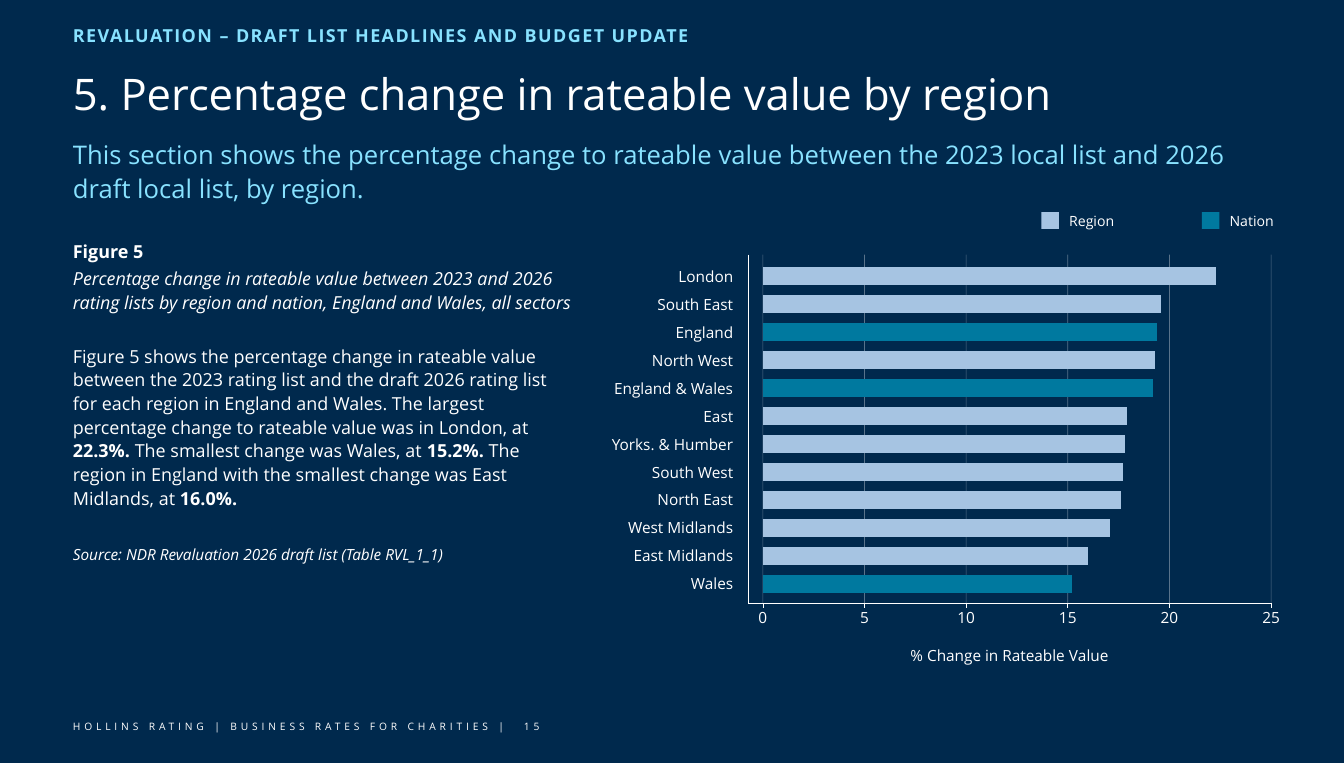
from lxml import etree
from pptx import Presentation
from pptx import util as u
from pptx.chart import data
from pptx.dml.color import RGBColor
from pptx.enum import chart as charts
from pptx.enum import shapes, text
from pptx.oxml import ns

NAVY = RGBColor(0x00, 0x29, 0x4D)
WHITE = RGBColor(0xFF, 0xFF, 0xFF)
SKY = RGBColor(0x88, 0xE2, 0xFF)
PALE = RGBColor(0xA6, 0xC4, 0xE2)
TEAL = RGBColor(0x00, 0x79, 0x9F)
FONT = "Open Sans"
KINDS = {"Region": PALE, "Nation": TEAL}
CHANGES = [
    ("London", "Region", 22.3),
    ("South East", "Region", 19.6),
    ("England", "Nation", 19.4),
    ("North West", "Region", 19.3),
    ("England & Wales", "Nation", 19.2),
    ("East", "Region", 17.9),
    ("Yorks. & Humber", "Region", 17.8),
    ("South West", "Region", 17.7),
    ("North East", "Region", 17.6),
    ("West Midlands", "Region", 17.1),
    ("East Midlands", "Region", 16.0),
    ("Wales", "Nation", 15.2),
]


def set_font(font, color=WHITE, **values):
    font.color.rgb = color
    for name, value in {"name": FONT, "bold": False, "italic": False, **values}.items():
        setattr(font, name, value)


def fill_frame(frame, paragraphs, anchor=text.MSO_ANCHOR.TOP):
    settings = {"word_wrap": True, "vertical_anchor": anchor,
                "auto_size": text.MSO_AUTO_SIZE.NONE, "margin_left": 0,
                "margin_right": 0, "margin_top": 0, "margin_bottom": 0}
    for name, value in settings.items():
        setattr(frame, name, value)
    for index, (spans, layout) in enumerate(paragraphs):
        para = frame.add_paragraph() if index else frame.paragraphs[0]
        for name, value in layout.items():
            setattr(para, name, value)
        for words, values in spans:
            span = para.add_run()
            span.text = words
            values = dict(values)
            spacing = values.pop("spacing", 0)
            set_font(span.font, **values)
            if spacing:
                span.font._element.set("spc", str(spacing))


def add_text(page, box, paragraphs, **options):
    area = page.shapes.add_textbox(*map(u.Inches, box))
    fill_frame(area.text_frame, paragraphs, **options)


def add_line(page, start, end, opacity=100):
    line = page.shapes.add_connector(shapes.MSO_CONNECTOR.STRAIGHT,
                                     *map(u.Inches, start + end))
    line.line.color.rgb = WHITE
    line.line.width = u.Pt(0.5)
    if opacity < 100:
        color = line._element.spPr.find(f".//{ns.qn('a:srgbClr')}")
        etree.SubElement(color, ns.qn("a:alpha")).set("val", str(opacity * 1000))
    etree.SubElement(line._element.spPr, ns.qn("a:effectLst"))


def add_layout(parent, position, **fractions):
    for old in parent.findall(ns.qn("c:layout")):
        parent.remove(old)
    layout = etree.Element(ns.qn("c:layout"))
    parent.insert(position, layout)
    manual = etree.SubElement(layout, ns.qn("c:manualLayout"))
    values = {"xMode": "edge", "yMode": "edge", **fractions}
    if "w" in fractions:
        values = {"layoutTarget": "inner", **values}
    for name, value in values.items():
        etree.SubElement(manual, ns.qn(f"c:{name}")).set("val", str(value))


def add_heading(page, box):
    left, top, width, height = box
    body = {"line_spacing": 1.1, "space_after": u.Pt(3)}
    add_text(page, (left, top, width, 0.34), [
        ([("REVALUATION – DRAFT LIST HEADLINES AND BUDGET UPDATE",
           {"size": u.Pt(14), "bold": True, "color": SKY, "spacing": 110})], body)])
    title = page.shapes.title
    place = {"left": left, "top": top + 0.55, "width": width, "height": 0.55}
    for name, value in place.items():
        setattr(title, name, u.Inches(value))
    fill_frame(title.text_frame, [
        ([("5. Percentage change in rateable value by region", {"size": u.Pt(34)})],
         {"line_spacing": 0.9, "space_after": u.Pt(7.5), "alignment": text.PP_ALIGN.LEFT})])
    add_text(page, (left, top + 1.23, width, height - 1.23), [
        ([("This section shows the percentage change to rateable value between the "
           "2023 local list and 2026 draft local list, by region.",
           {"size": u.Pt(20), "color": SKY})], body)])


def add_commentary(page, box):
    left, top, width, height = box
    plain = {"size": u.Pt(14)}
    bold = {**plain, "bold": True}
    body = {"line_spacing": 1.1, "space_after": u.Pt(12)}
    add_text(page, (left, top, width, 0.8), [
        ([("Figure 5", bold)], {**body, "space_after": u.Pt(3)}),
        ([("Percentage change in rateable value between 2023 and 2026 rating lists "
           "by region and nation, England and Wales, all sectors",
           {**plain, "italic": True})], body)])
    add_text(page, (left, top + 1.14, width - 0.24, 1.9), [
        ([("Figure 5 shows the percentage change in rateable value between the 2023 "
           "rating list and the draft 2026 rating list for each region in England and "
           "Wales. The largest percentage change to rateable value was in London, at ", plain),
          ("22.3%. ", bold),
          ("The smallest change was Wales, at ", plain),
          ("15.2%. ", bold),
          ("The region in England with the smallest change was East Midlands, at ", plain),
          ("16.0%.", bold)], body)])
    add_text(page, (left, top + height - 0.26, width, 0.26), [
        ([("Source: NDR Revaluation 2026 draft list (Table RVL_1_1)",
           {"size": u.Pt(12), "italic": True})], body)])


def add_legend(page, box):
    left, top, width, height = box
    for index, (kind, color) in enumerate(KINDS.items()):
        start = left + index * width / len(KINDS)
        key = page.shapes.add_shape(shapes.MSO_SHAPE.RECTANGLE, *map(
            u.Inches, (start, top + 0.07, 0.19, 0.18)))
        key.shadow.inherit = False
        key.fill.solid()
        key.fill.fore_color.rgb = color
        key.line.fill.background()
        add_text(page, (start + 0.3, top, 0.82, height),
                 [([(kind, {"size": u.Pt(11)})], {})], anchor=text.MSO_ANCHOR.MIDDLE)


def add_axes(page, box):
    left, top, width, height = box
    right, bottom = left + width, top + height
    for step in range(6):
        x = left + step * width / 5
        add_line(page, (x, bottom), (x, top), opacity=34)
        add_line(page, (x, bottom + 0.05), (x, bottom))
    add_line(page, (left - 0.16, top), (left - 0.16, bottom))
    add_line(page, (right, bottom), (left - 0.16, bottom))


def add_change_chart(page, box):
    left, top, width, height = box
    frame_left, frame_top, frame_width, frame_height = 8, 2.6, 6.2, 4.8
    rows = CHANGES[::-1]
    values = data.CategoryChartData()
    values.categories = [name for name, kind, change in rows]
    for kind in KINDS:
        values.add_series(kind, [change if group == kind else None
                                 for name, group, change in rows])
    chart = page.shapes.add_chart(charts.XL_CHART_TYPE.BAR_CLUSTERED, *map(
        u.Inches, (frame_left, frame_top, frame_width, frame_height)), values).chart
    chart.has_legend = chart.has_title = False
    set_font(chart.font, size=u.Pt(12))
    plot = chart.plots[0]
    for name, value in {"gap_width": 52, "overlap": 100, "vary_by_categories": False}.items():
        setattr(plot, name, value)
    for series, color in zip(plot.series, KINDS.values()):
        series.format.fill.solid()
        series.format.fill.fore_color.rgb = color

    names = chart.category_axis
    names.tick_label_position = charts.XL_TICK_LABEL_POSITION.NONE
    names.major_tick_mark = charts.XL_TICK_MARK.NONE
    scale = chart.value_axis
    settings = {"minimum_scale": 0, "maximum_scale": 25, "major_unit": 5,
                "major_tick_mark": charts.XL_TICK_MARK.OUTSIDE,
                "has_major_gridlines": False, "has_title": True}
    for name, value in settings.items():
        setattr(scale, name, value)
    scale.tick_labels.number_format = "0"
    scale.tick_labels.number_format_is_linked = False
    for axis in (names, scale):
        axis.format.line.fill.background()
    title = scale.axis_title
    title.text_frame.text = "% Change in Rateable Value"
    set_font(title.text_frame.paragraphs[0].runs[0].font, size=u.Pt(12))
    add_layout(title._element, 1, x=round((left + 1.57 - frame_left) / frame_width, 4),
               y=round((top + height + 0.46 - frame_top) / frame_height, 4))
    add_layout(chart._chartSpace.chart.plotArea, 0,
               x=(left - frame_left) / frame_width, y=(top - frame_top) / frame_height,
               w=width / frame_width, h=height / frame_height)

    pitch = height / len(CHANGES)
    for index, (name, kind, change) in enumerate(CHANGES):
        add_text(page, (left - 1.92, top + index * pitch, 1.6, pitch),
                 [([(name, {"size": u.Pt(12)})], {"alignment": text.PP_ALIGN.RIGHT})],
                 anchor=text.MSO_ANCHOR.MIDDLE)


def add_footer(page, box):
    left, top, width, height = box
    small = {"size": u.Pt(8), "spacing": 300}
    for offset, span, words in ((0, 4.85, "HOLLINS RATING | BUSINESS RATES FOR CHARITIES |"),
                                (4.89, width - 4.89, "15")):
        add_text(page, (left + offset, top, span, height),
                 [([(words, small)], {"space_after": u.Pt(6)})])


def main():
    deck = Presentation()
    deck.slide_width, deck.slide_height = u.Inches(14.57), u.Inches(8.27)
    page = deck.slides.add_slide(deck.slide_layouts[5])
    page.background.fill.solid()
    page.background.fill.fore_color.rgb = NAVY
    add_heading(page, (0.79, 0.24, 12.99, 1.95))
    add_commentary(page, (0.79, 2.58, 5.54, 3.57))
    add_legend(page, (11.29, 2.23, 3.48, 0.32))
    add_axes(page, (8.27, 2.76, 5.51, 3.78))
    add_change_chart(page, (8.27, 2.84, 5.51, 3.64))
    add_footer(page, (0.79, 7.81, 5.21, 0.23))
    deck.save("out.pptx")


if __name__ == "__main__":
    main()
